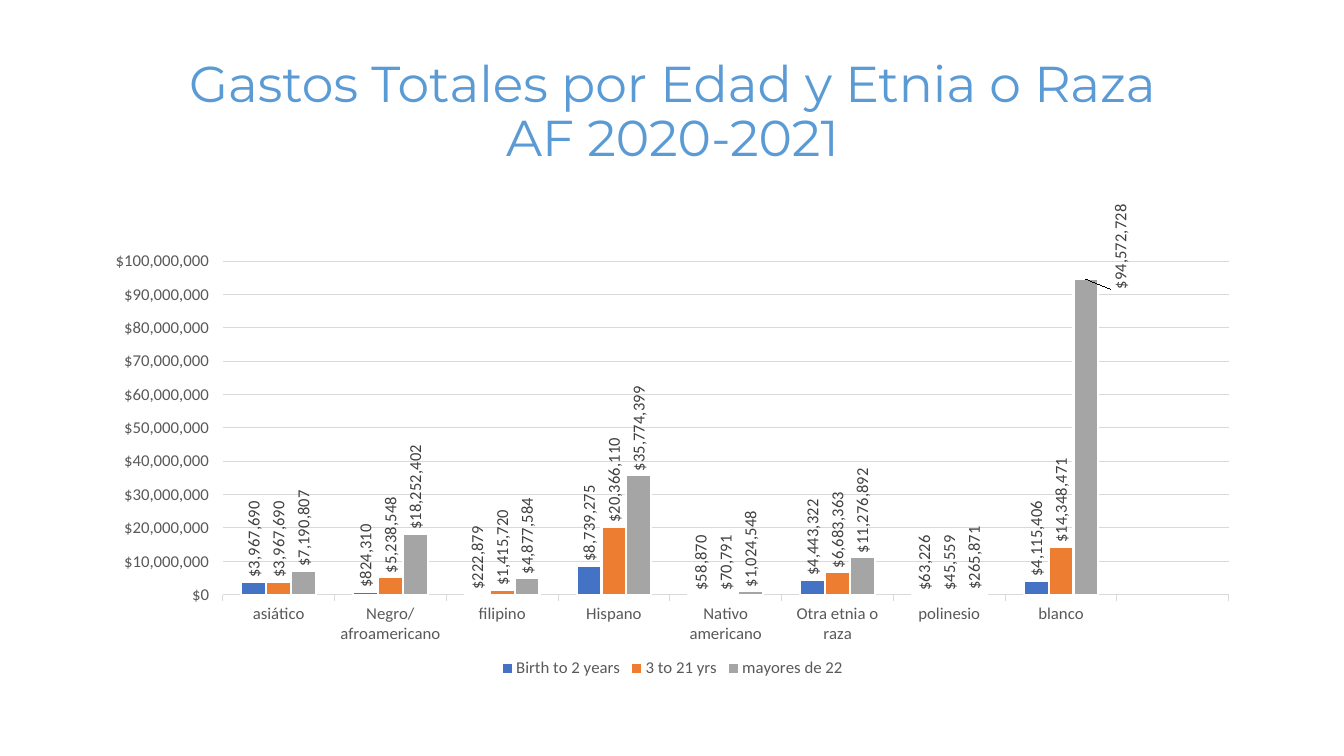
from dataclasses import dataclass

from lxml.etree import SubElement
from pptx import Presentation
from pptx.chart.data import CategoryChartData
from pptx.dml.color import RGBColor
from pptx.enum.chart import XL_CHART_TYPE, XL_LABEL_POSITION, XL_LEGEND_POSITION, XL_TICK_MARK
from pptx.enum.text import MSO_ANCHOR, PP_ALIGN
from pptx.oxml.ns import qn
from pptx.util import Pt

EMU_PER_PX = 914400 / 100.8
DOLLARS = '"$"#,##0_);[Red]\\("$"#,##0\\)'

ETHNICITIES = ["asiático", "Negro/afroamericano", "filipino", "Hispano", "Nativo americano",
               "Otra etnia o raza", "polinesio", "blanco", ""]
SPENDING_BY_AGE = {
    "Birth to 2 years": [3967690, 824310, 222879, 8739275, 58870, 4443322, 63226, 4115406, None],
    "3 to 21 yrs": [3967690, 5238548, 1415720, 20366110, 70791, 6683363, 45559, 14348471, None],
    "mayores de 22": [7190807, 18252402, 4877584, 35774399, 1024548, 11276892, 265871, 94572728,
                      None],
}


@dataclass(frozen=True)
class Theme:
    title_font: str = "Montserrat"
    chart_font: str = "Calibri"
    title_size: int = 36
    chart_size: int = 12
    title: str = "5B9BD5"
    axis_text: str = "595959"
    label_text: str = "404040"
    grid: str = "D9D9D9"
    bar_outline: str = "FFFFFF"
    bars: tuple = ("4472C4", "ED7D31", "A5A5A5")


def px(length):
    return round(length * EMU_PER_PX)


def apply_format(target, values):
    for attribute, value in values.items():
        setattr(target, attribute, value)


def style_font(font, name, size, color):
    apply_format(font, {"name": name, "size": Pt(size)})
    font.color.rgb = RGBColor.from_string(color)


def style_line(line, color, width):
    line.color.rgb = RGBColor.from_string(color)
    line.width = Pt(width)


def set_layout(layout, **values):
    """Fill a c:layout element with manual placement, in fractions of the chart."""
    manual = SubElement(layout, qn("c:manualLayout"))
    for tag, value in values.items():
        SubElement(manual, qn(f"c:{tag}")).set("val", str(value))


def turn_upright(text_properties):
    apply_to = text_properties.find(qn("a:bodyPr"))
    apply_to.set("rot", "-5400000")
    apply_to.set("vert", "horz")


class SlideBuilder:
    def __init__(self, slide, theme):
        self.slide = slide
        self.theme = theme

    def title(self, wording, box):
        heading = self.slide.shapes.title
        apply_format(heading, dict(zip(("left", "top", "width", "height"), map(px, box))))
        frame = heading.text_frame
        apply_format(frame, {"text": wording, "word_wrap": True,
                             "vertical_anchor": MSO_ANCHOR.MIDDLE})
        paragraph = frame.paragraphs[0]
        apply_format(paragraph, {"alignment": PP_ALIGN.CENTER, "line_spacing": 0.9})
        for run in paragraph.runs:
            style_font(run.font, self.theme.title_font, self.theme.title_size, self.theme.title)

    def column_chart(self, categories, series_values, box):
        data = CategoryChartData(number_format=DOLLARS)
        data.categories = categories
        for age_group, amounts in series_values.items():
            data.add_series(age_group, amounts)
        chart = self.slide.shapes.add_chart(
            XL_CHART_TYPE.COLUMN_CLUSTERED, *map(px, box), data).chart
        apply_format(chart, {"has_title": False, "has_legend": True})
        self.chart_font(chart.font, self.theme.axis_text)
        apply_format(chart.legend, {"position": XL_LEGEND_POSITION.BOTTOM,
                                    "include_in_layout": False})
        self.chart_font(chart.legend.font, self.theme.axis_text)
        self.axes(chart)
        plot = chart.plots[0]
        apply_format(plot, {"gap_width": 150, "overlap": 0, "vary_by_categories": False})
        for series, color in zip(plot.series, self.theme.bars):
            self.bars(series, color)
        return chart

    def chart_font(self, font, color):
        style_font(font, self.theme.chart_font, self.theme.chart_size, color)

    def axes(self, chart):
        for axis in (chart.category_axis, chart.value_axis):
            axis.major_tick_mark = XL_TICK_MARK.OUTSIDE
            self.chart_font(axis.tick_labels.font, self.theme.axis_text)
        style_line(chart.category_axis.format.line, self.theme.grid, 0.75)
        amounts = chart.value_axis
        apply_format(amounts, {"minimum_scale": 0, "maximum_scale": 100_000_000,
                               "major_unit": 10_000_000, "has_major_gridlines": True})
        apply_format(amounts.tick_labels, {"number_format": DOLLARS,
                                           "number_format_is_linked": False})
        amounts.format.line.fill.background()
        style_line(amounts.major_gridlines.format.line, self.theme.grid, 0.75)

    def bars(self, series, color):
        series.invert_if_negative = False
        series.format.fill.solid()
        series.format.fill.fore_color.rgb = RGBColor.from_string(color)
        style_line(series.format.line, self.theme.bar_outline, 1.5)
        labels = series.data_labels
        apply_format(labels, {"show_value": True, "position": XL_LABEL_POSITION.OUTSIDE_END,
                              "number_format": DOLLARS, "number_format_is_linked": False})
        self.chart_font(labels.font, self.theme.label_text)
        turn_upright(labels._element.find(qn("c:txPr")))

    def shift_label(self, series, index, right, down):
        """Move one value label away from its bar, in fractions of the chart."""
        label = series.points[index].data_label
        label.position = XL_LABEL_POSITION.OUTSIDE_END
        self.chart_font(label.font, self.theme.label_text)
        point = series.data_labels._element.find(qn("c:dLbl"))
        turn_upright(point.find(qn("c:txPr")))
        layout = SubElement(point, qn("c:layout"))
        point.find(qn("c:idx")).addnext(layout)
        set_layout(layout, x=right, y=down)

    def place_plot(self, chart, left, top, width, height):
        plot_area = chart._chartSpace.chart.plotArea
        layout = plot_area.find(qn("c:layout"))
        if layout is None:
            layout = SubElement(plot_area, qn("c:layout"))
            plot_area.insert(0, layout)
        set_layout(layout, layoutTarget="inner", xMode="edge", yMode="edge",
                   x=left, y=top, w=width, h=height)


def main():
    presentation = Presentation()
    apply_format(presentation, {"slide_width": px(1344), "slide_height": px(756)})
    slide = presentation.slides.add_slide(presentation.slide_layouts[5])
    builder = SlideBuilder(slide, Theme())
    builder.title("Gastos Totales por Edad y Etnia o Raza\vAF 2020-2021", (93, 40, 1159, 146))
    spending = builder.column_chart(ETHNICITIES, SPENDING_BY_AGE, (93, 202, 1159, 480))
    builder.place_plot(spending, 0.112, 0.107, 0.868, 0.708)
    adults = spending.plots[0].series[2]
    builder.shift_label(adults, ETHNICITIES.index("blanco"), 0.03, 0.03)
    presentation.save("out.pptx")


if __name__ == "__main__":
    main()
